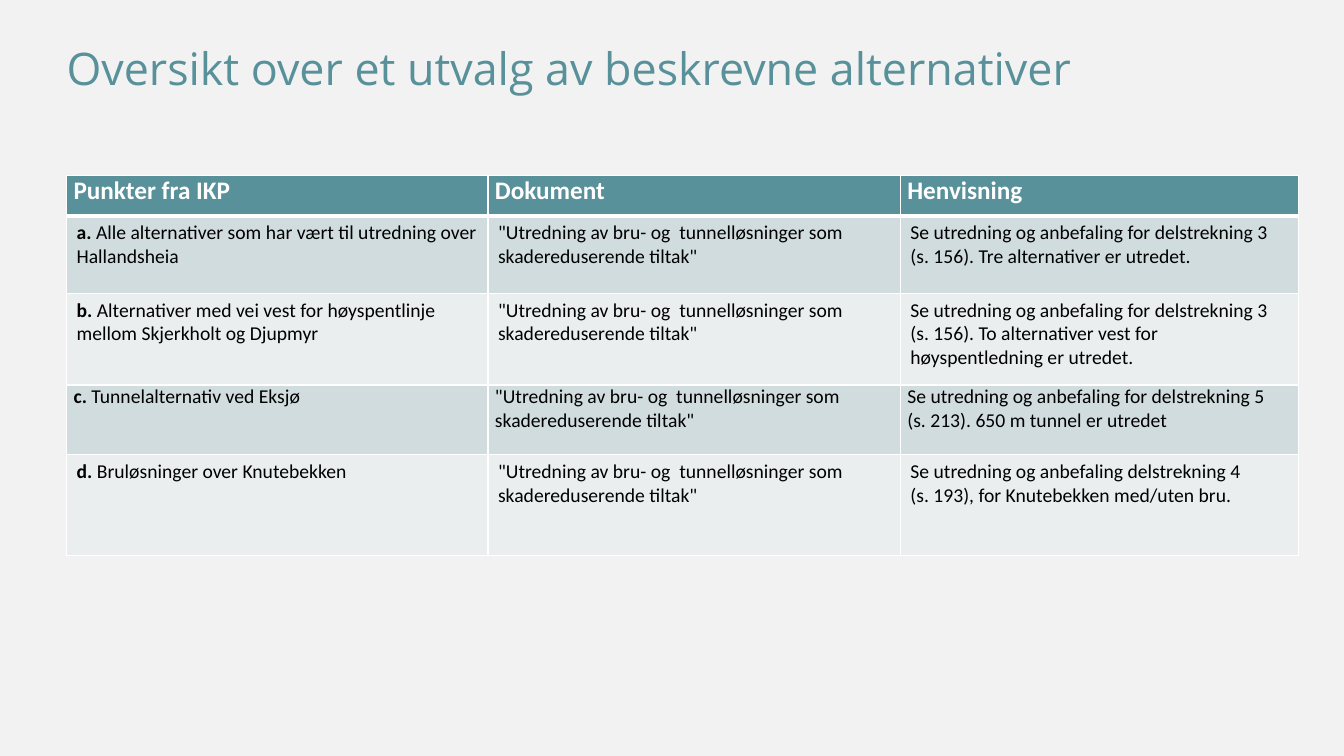
from lxml import etree
from pptx import Presentation
from pptx.dml.color import RGBColor
from pptx.enum.text import MSO_ANCHOR, PP_ALIGN
from pptx.oxml.ns import qn
from pptx.util import Inches, Pt

COLORS = {
    "background": "F2F2F2",
    "teal": "589199",
    "odd_row": "D1DCDE",
    "even_row": "EAEEEF",
    "white": "FFFFFF",
    "black": "000000",
}
COLUMN_WIDTHS = [4.18, 4.09, 3.95]
ROW_HEIGHTS = [0.4, 0.77, 0.91, 0.69, 1]
TIGHT_ROWS = (0, 3)
HEADERS = ["Punkter fra IKP", "Dokument", "Henvisning"]
DOCUMENT = '"Utredning av bru- og  tunnelløsninger som skadereduserende tiltak"'
ALTERNATIVES = [
    ("a. ", "Alle alternativer som har vært til utredning over Hallandsheia",
     "Se utredning og anbefaling for delstrekning 3 (s. 156). Tre alternativer er utredet."),
    ("b. ", "Alternativer med vei vest for høyspentlinje mellom Skjerkholt og Djupmyr",
     "Se utredning og anbefaling for delstrekning 3 (s. 156). "
     "To alternativer vest for høyspentledning er utredet."),
    ("c. ", "Tunnelalternativ ved Eksjø",
     "Se utredning og anbefaling for delstrekning 5\v(s. 213). 650 m tunnel er utredet"),
    ("d. ", "Bruløsninger over Knutebekken",
     "Se utredning og anbefaling delstrekning 4\v(s. 193), for Knutebekken med/uten bru."),
]


def color(name):
    return RGBColor.from_string(COLORS[name])


def format_run(run, font_name, size, color_name, bold=False):
    run.font.name = font_name
    run.font.size = Pt(size)
    run.font.bold = bold
    run.font.color.rgb = color(color_name)


def set_borders(cell, top, bottom):
    """Draw white cell borders; top and bottom are widths in points."""
    properties = cell._tc.get_or_add_tcPr()
    sides = [("a:lnL", 1), ("a:lnR", 1), ("a:lnT", top), ("a:lnB", bottom)]
    for position, (tag, width) in enumerate(sides):
        line = etree.Element(qn(tag), w=str(Pt(width)))
        fill = etree.SubElement(line, qn("a:solidFill"))
        etree.SubElement(fill, qn("a:srgbClr"), val=COLORS["white"])
        properties.insert(position, line)


def style_cell(cell, row):
    side, edge = (0.07, 0) if row in TIGHT_ROWS else (0.1, 0.05)
    cell.margin_left = cell.margin_right = Inches(side)
    cell.margin_top = cell.margin_bottom = Inches(edge)
    cell.vertical_anchor = MSO_ANCHOR.TOP
    cell.fill.solid()
    fill_name = "teal" if row == 0 else "odd_row" if row % 2 else "even_row"
    cell.fill.fore_color.rgb = color(fill_name)
    set_borders(cell, top=3 if row == 1 else 1, bottom=3 if row == 0 else 1)


def add_title(slide, left, top, width, height):
    title = slide.shapes.title
    title.left, title.top = Inches(left), Inches(top)
    title.width, title.height = Inches(width), Inches(height)
    frame = title.text_frame
    frame.margin_left = frame.margin_right = 0
    frame.margin_top = frame.margin_bottom = 0
    frame.vertical_anchor = MSO_ANCHOR.TOP
    frame.word_wrap = True
    frame.text = "Oversikt over et utvalg av beskrevne alternativer"
    paragraph = frame.paragraphs[0]
    paragraph.alignment = PP_ALIGN.LEFT
    paragraph.line_spacing = 1.0
    format_run(paragraph.runs[0], "Open Sans", 32, "teal")


def add_alternatives_table(slide, left, top):
    rows = [[("", header) for header in HEADERS]]
    rows += [[(label, point), ("", DOCUMENT), ("", reference)]
             for label, point, reference in ALTERNATIVES]
    table = slide.shapes.add_table(
        len(rows), len(HEADERS), Inches(left), Inches(top),
        Inches(sum(COLUMN_WIDTHS)), Inches(sum(ROW_HEIGHTS))).table
    for column, width in zip(table.columns, COLUMN_WIDTHS):
        column.width = Inches(width)
    for table_row, height in zip(table.rows, ROW_HEIGHTS):
        table_row.height = Inches(height)

    for row, contents in enumerate(rows):
        is_header = row == 0
        size, color_name = (18, "white") if is_header else (14, "black")
        for column, (label, text) in enumerate(contents):
            cell = table.cell(row, column)
            style_cell(cell, row)
            paragraph = cell.text_frame.paragraphs[0]
            paragraph.text = label + text
            if label:
                paragraph.text = label
                paragraph.add_run().text = text
            for index, run in enumerate(paragraph.runs):
                bold = is_header or (bool(label) and index == 0)
                format_run(run, "Calibri", size, color_name, bold)


def main():
    presentation = Presentation()
    presentation.slide_width = Inches(13.33)
    presentation.slide_height = Inches(7.5)
    slide = presentation.slides.add_slide(presentation.slide_layouts[5])
    slide.background.fill.solid()
    slide.background.fill.fore_color.rgb = color("background")
    add_title(slide, 0.66, 0.4, 12.01, 0.87)
    add_alternatives_table(slide, 0.66, 1.74)
    presentation.save("out.pptx")


if __name__ == "__main__":
    main()
